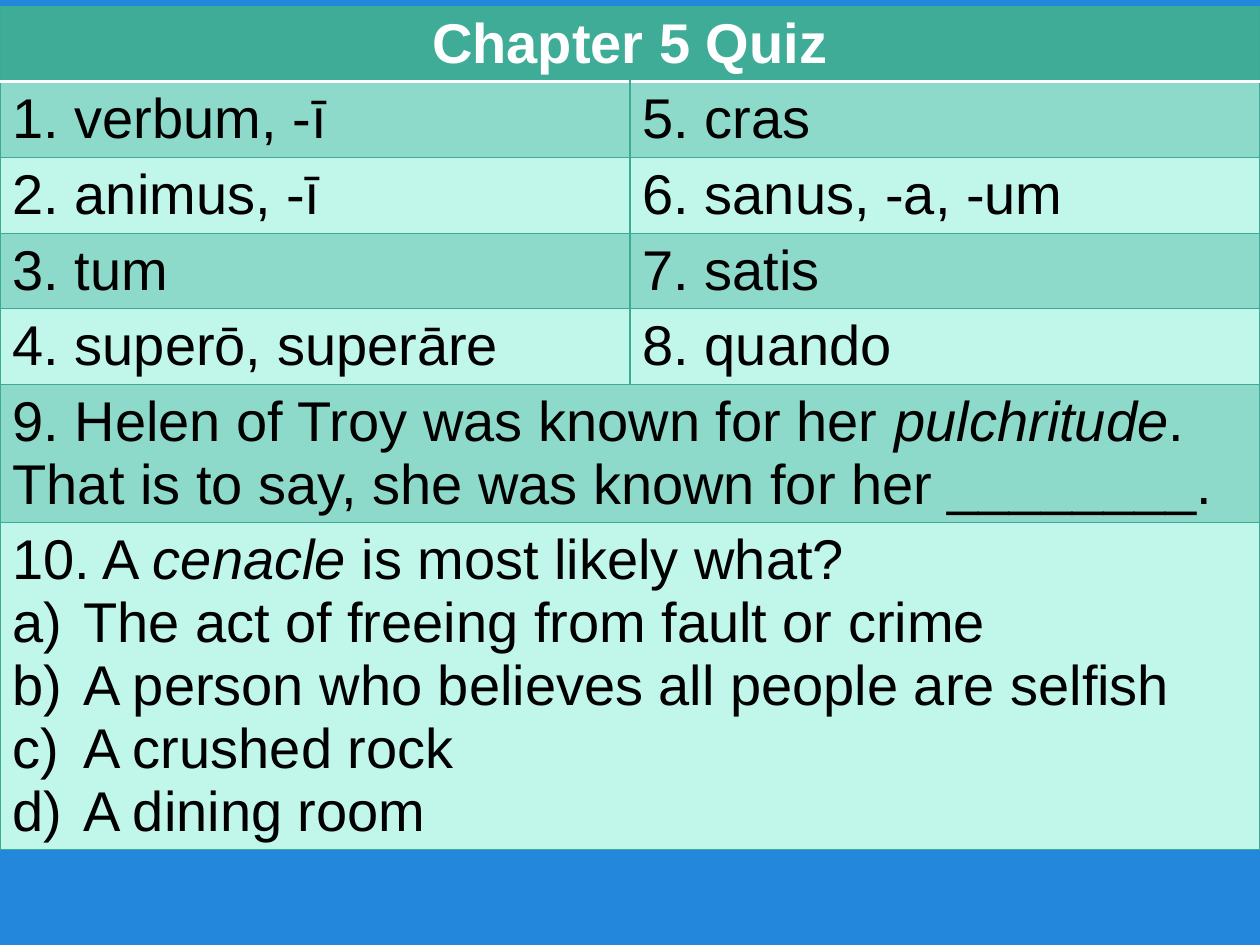
import lxml.etree
import pptx
import pptx.dml.color
import pptx.enum.text
import pptx.oxml.ns
import pptx.util

HEADER, DARK_BAND, LIGHT_BAND = "3FAC98", "8DD9CA", "C1F6EA"
BORDER, WHITE, BLACK, BLUE = "3BAB96", "FFFFFF", "000000", "2388DB"
COLUMNS, ROWS = 100, 75

WORDS = [
    ("1. verbum, -ī", "5. cras"),
    ("2. animus, -ī", "6. sanus, -a, -um"),
    ("3. tum", "7. satis"),
    ("4. superō, superāre", "8. quando"),
]
# Asterisks enclose italic words.
HELEN = ("9. Helen of Troy was known for her *pulchritude*. "
         "That is to say, she was known for her ________.")
CENACLE = "10. A *cenacle* is most likely what?"
ANSWERS = [
    "The act of freeing from fault or crime",
    "A person who believes all people are selfish",
    "A crushed rock",
    "A dining room",
]
ROW_HEIGHTS = [6] * 5 + [11, 25.9]


def color(value):
    return pptx.dml.color.RGBColor.from_string(value)


def add_element(parent, tag, **attributes):
    return lxml.etree.SubElement(parent, pptx.oxml.ns.qn(tag), **attributes)


class QuizSlide:
    """Style and current slide; lengths are columns and rows of the grid."""
    font, size = "Arial", 32

    def __init__(self, deck):
        self.deck = deck
        self.slide = deck.slides.add_slide(deck.slide_layouts[6])

    def x(self, columns):
        return round(self.deck.slide_width * columns / COLUMNS)

    def y(self, rows):
        return round(self.deck.slide_height * rows / ROWS)

    def background(self, value):
        fill = self.slide.background.fill
        fill.solid()
        fill.fore_color.rgb = color(value)

    def table(self, left, top, widths, heights):
        frame = self.slide.shapes.add_table(
            len(heights), len(widths), self.x(left), self.y(top),
            self.x(sum(widths)), self.y(sum(heights)))
        table = frame.table
        for column, width in zip(table.columns, widths):
            column.width = self.x(width)
        for row, height in zip(table.rows, heights):
            row.height = self.y(height)
        return table

    def cell(self, cell, fill, **edges):
        """Fill a cell and draw its borders; edges holds special (colour, width) pairs."""
        properties = cell._tc.get_or_add_tcPr()
        for side in "LRTB":
            value, width = edges.get(side, (BORDER, 0.75))
            line = add_element(properties, f"a:ln{side}", w=str(pptx.util.Pt(width)))
            solid = add_element(line, "a:solidFill")
            add_element(solid, "a:srgbClr", val=value)
        cell.fill.solid()
        cell.fill.fore_color.rgb = color(fill)

    def text(self, para, text, value=BLACK, bold=False):
        for index, part in enumerate(text.split("*")):
            span = para.add_run()
            span.text = part
            span.font.name = self.font
            span.font.size = pptx.util.Pt(self.size)
            span.font.color.rgb = color(value)
            span.font.bold = bold
            span.font.italic = index % 2 == 1

    def lettered(self, para, text):
        indent = pptx.util.Inches(0.56)
        properties = para._p.get_or_add_pPr()
        properties.set("marL", str(indent))
        properties.set("indent", str(-indent))
        add_element(properties, "a:buFont", typeface=self.font)
        add_element(properties, "a:buAutoNum", type="alphaLcParenR")
        self.text(para, text)


def main():
    deck = pptx.Presentation()
    deck.slide_width = pptx.util.Inches(10)
    deck.slide_height = pptx.util.Inches(7.5)
    quiz = QuizSlide(deck)
    quiz.background(BLUE)

    table = quiz.table(0, 0.5, [50, 50], ROW_HEIGHTS)
    rule = (WHITE, 2)
    for index in range(len(ROW_HEIGHTS)):
        fill = HEADER if index == 0 else DARK_BAND if index % 2 else LIGHT_BAND
        edges = {0: {"B": rule}, 1: {"T": rule}}.get(index, {})
        for column in range(2):
            quiz.cell(table.cell(index, column), fill, **edges)
    for index in (0, 5, 6):
        table.cell(index, 0).merge(table.cell(index, 1))

    title = table.cell(0, 0).text_frame.paragraphs[0]
    title.alignment = pptx.enum.text.PP_ALIGN.CENTER
    quiz.text(title, "Chapter 5 Quiz", WHITE, bold=True)
    for index, pair in enumerate(WORDS, start=1):
        for column, word in enumerate(pair):
            quiz.text(table.cell(index, column).text_frame.paragraphs[0], word)
    quiz.text(table.cell(5, 0).text_frame.paragraphs[0], HELEN)
    question = table.cell(6, 0).text_frame
    quiz.text(question.paragraphs[0], CENACLE)
    for answer in ANSWERS:
        quiz.lettered(question.add_paragraph(), answer)

    deck.save("out.pptx")


if __name__ == "__main__":
    main()
